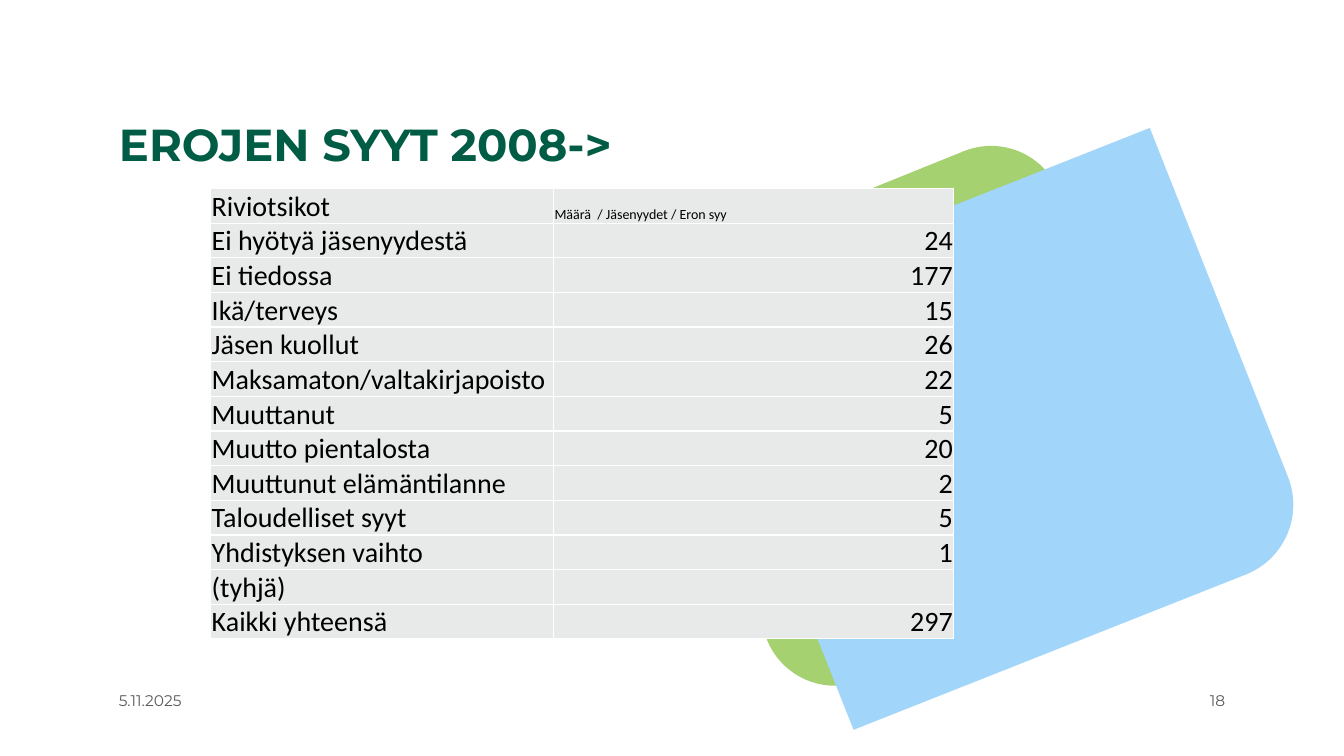
from pptx import Presentation
from pptx.dml.color import RGBColor
from pptx.enum import shapes, text
from pptx.oxml import parse_xml
from pptx.oxml.ns import nsdecls
from pptx.util import Inches, Pt

GREEN = RGBColor(0xA5, 0xD1, 0x71)
BLUE = RGBColor(0xA1, 0xD5, 0xFA)
DARK = RGBColor(0x00, 0x5C, 0x44)
GREY = RGBColor(0x59, 0x5B, 0x5E)
PALE = RGBColor(0xE7, 0xEA, 0xE9)
WHITE = RGBColor(0xFF, 0xFF, 0xFF)
BLACK = RGBColor(0, 0, 0)

LEFT = text.PP_ALIGN.LEFT
RIGHT = text.PP_ALIGN.RIGHT
MIDDLE = text.MSO_ANCHOR.MIDDLE

ROWS = [
    ("Riviotsikot", "Määrä  / Jäsenyydet / Eron syy"),
    ("Ei hyötyä jäsenyydestä", "24"),
    ("Ei tiedossa", "177"),
    ("Ikä/terveys", "15"),
    ("Jäsen kuollut", "26"),
    ("Maksamaton/valtakirjapoisto", "22"),
    ("Muuttanut", "5"),
    ("Muutto pientalosta", "20"),
    ("Muuttunut elämäntilanne", "2"),
    ("Taloudelliset syyt", "5"),
    ("Yhdistyksen vaihto", "1"),
    ("(tyhjä)", ""),
    ("Kaikki yhteensä", "297"),
]
WIDTHS = (3.4, 3.97)
HEIGHT = 0.34


def add_run(para, words, size, face, color, bold=False, align=LEFT):
    para.alignment = align
    para.font.size = Pt(size)
    if words:
        run = para.add_run()
        run.text = words
        font = run.font
        font.size, font.name, font.bold = Pt(size), face, bold
        font.color.rgb = color


def add_leaf(slide, box, turn, color):
    leaf = slide.shapes.add_shape(
        shapes.MSO_SHAPE.ROUND_2_DIAG_RECTANGLE, *map(Inches, box))
    leaf.rotation = turn
    leaf.shadow.inherit = False
    leaf.fill.solid()
    leaf.fill.fore_color.rgb = color
    leaf.line.fill.background()


def set_title(slide, words):
    title = slide.shapes.title
    title.left, title.top = Inches(1.08), Inches(1.16)
    title.width, title.height = Inches(7.74), Inches(0.6)
    frame = title.text_frame
    frame.word_wrap = True
    frame.vertical_anchor = MIDDLE
    para = frame.paragraphs[0]
    para.line_spacing = 0.9
    add_run(para, words, 32, "Montserrat", DARK, bold=True)


def add_foot(slide, left, width, words, align):
    box = slide.shapes.add_textbox(
        Inches(left), Inches(6.75), Inches(width), Inches(0.4))
    frame = box.text_frame
    frame.word_wrap = True
    frame.vertical_anchor = MIDDLE
    add_run(frame.paragraphs[0], words, 11, "Montserrat", GREY, align=align)


def add_edges(cell):
    props = cell._tc.get_or_add_tcPr()
    for side in ("lnL", "lnR", "lnT", "lnB"):
        props.append(parse_xml(
            f'<a:{side} {nsdecls("a")} w="{Pt(1)}"><a:solidFill>'
            f'<a:srgbClr val="{WHITE}"/></a:solidFill></a:{side}>'))


def fill_cell(cell, words, size, align):
    cell.margin_left = cell.margin_right = cell.margin_top = Inches(0.01)
    cell.margin_bottom = 0
    cell.vertical_anchor = text.MSO_ANCHOR.BOTTOM
    add_edges(cell)
    cell.fill.solid()
    cell.fill.fore_color.rgb = PALE
    add_run(cell.text_frame.paragraphs[0], words, size, "Calibri", BLACK,
            align=align)


def add_grid(slide):
    grid = slide.shapes.add_table(
        len(ROWS), len(WIDTHS), Inches(2.09), Inches(1.87),
        Inches(sum(WIDTHS)), Inches(HEIGHT * len(ROWS))).table
    grid.first_row = grid.horz_banding = False
    for col, width in zip(grid.columns, WIDTHS):
        col.width = Inches(width)
    for row, (label, count) in enumerate(ROWS):
        grid.rows[row].height = Inches(HEIGHT)
        head = row == 0
        fill_cell(grid.cell(row, 0), label, 20, LEFT)
        fill_cell(grid.cell(row, 1), count, 10 if head else 20,
                  LEFT if head else RIGHT)


def main():
    deck = Presentation()
    deck.slide_width, deck.slide_height = Inches(13.33), Inches(7.5)
    slide = deck.slides.add_slide(deck.slide_layouts[5])
    add_leaf(slide, (6.81, 1.95, 4.49, 4.35), 68, GREEN)
    add_leaf(slide, (7.47, 2.02, 4.93, 4.47), 338.4, BLUE)
    set_title(slide, "EROJEN SYYT 2008->")
    add_foot(slide, 1.08, 2.96, "5.11.2025", LEFT)
    add_foot(slide, 11.08, 1.17, "18", RIGHT)
    add_grid(slide)
    deck.save("out.pptx")


if __name__ == "__main__":
    main()
